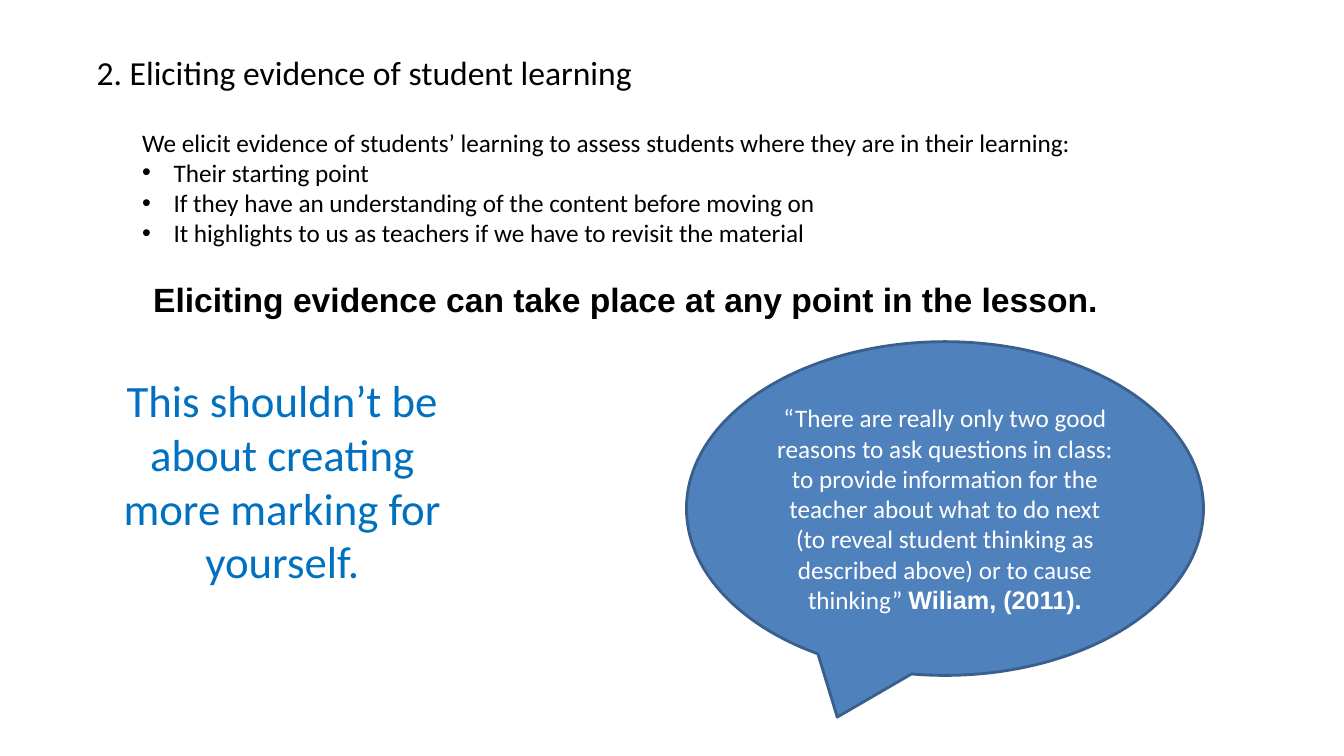
from dataclasses import dataclass

import pptx
import pptx.dml.color
import pptx.enum.shapes
import pptx.enum.text
import pptx.oxml.xmlchemy
import pptx.util
from lxml import etree
from pptx.util import Cm, Pt

TITLE = "2. Eliciting evidence of student learning"
INTRO = "We elicit evidence of students’ learning to assess students where they are in their learning:"
REASONS = [
    "Their starting point",
    "If they have an understanding of the content before moving on",
    "It highlights to us as teachers if we have to revisit the material",
]
KEY_POINT = "Eliciting evidence can take place at any point in the lesson."
REMINDER = "This shouldn’t be about creating more marking for yourself."
QUOTE = (
    "“There are really only two good reasons to ask questions in class: "
    "to provide information for the teacher about what to do next "
    "(to reveal student thinking as described above) or to cause thinking” "
)
QUOTE_SOURCE = "Wiliam, (2011)."

# left, top, width, height
PLACES = {
    "title": (Cm(2.18), Cm(1.19), Cm(23.8), Cm(1.27)),
    "body": (Cm(3.33), Cm(3.07), Cm(24.87), Cm(5.13)),
    "reminder": (Cm(2.44), Cm(9.27), Cm(9.35), Cm(5.74)),
    "quote": (Cm(17.3), Cm(8.61), Cm(13.03), Cm(8.41)),
}
BULLET_INDENT = Cm(0.79)


@dataclass(frozen=True)
class Theme:
    text_font: str = "Calibri"
    strong_font: str = "Arial"
    black: str = "000000"
    white: str = "FFFFFF"
    reminder_blue: str = "0070C0"
    bubble_fill: str = "4F81BD"
    bubble_line: str = "3A5F8C"
    body_size: int = 18
    heading_size: int = 24
    reminder_size: int = 32


THEME = Theme()
ALIGN = pptx.enum.text.PP_ALIGN
ANCHOR = pptx.enum.text.MSO_ANCHOR


def rgb(value):
    return pptx.dml.color.RGBColor.from_string(value)


def place(shape, name):
    shape.left, shape.top, shape.width, shape.height = PLACES[name]


def prepare_frame(shape, anchor):
    frame = shape.text_frame
    frame.word_wrap = True
    frame.auto_size = pptx.enum.text.MSO_AUTO_SIZE.NONE
    frame.vertical_anchor = anchor
    return frame


def add_para(frame, align, space_before=0):
    """Use the frame's first paragraph while it is empty, else append one."""
    first = frame.paragraphs[0]
    para = frame.add_paragraph() if first.runs else first
    para.alignment = align
    para.space_before = Pt(space_before)
    return para


def add_span(para, text, size, color=THEME.black, strong=False):
    span = para.add_run()
    span.text = text
    span.font.size = Pt(size)
    span.font.name = THEME.strong_font if strong else THEME.text_font
    span.font.bold = strong
    span.font.color.rgb = rgb(color)


def set_bullet(para, char=None):
    """Give the paragraph a hanging bullet, or none without a character."""
    props = para._p.get_or_add_pPr()
    indent = BULLET_INDENT if char else 0
    props.set("marL", str(indent))
    props.set("indent", str(-indent))
    tag = "a:buChar" if char else "a:buNone"
    bullet = etree.SubElement(props, pptx.oxml.ns.qn(tag))
    if char:
        bullet.set("char", char)


def fill_title(title):
    place(title, "title")
    para = add_para(prepare_frame(title, ANCHOR.MIDDLE), ALIGN.LEFT)
    add_span(para, TITLE, THEME.heading_size)


def fill_body(body):
    place(body, "body")
    body.fill.solid()
    body.fill.fore_color.rgb = rgb(THEME.white)
    frame = prepare_frame(body, ANCHOR.TOP)
    for text, char in [(INTRO, None)] + [(reason, "•") for reason in REASONS]:
        para = add_para(frame, ALIGN.JUSTIFY)
        set_bullet(para, char)
        add_span(para, text, THEME.body_size)
    para = add_para(frame, ALIGN.CENTER, space_before=22)
    set_bullet(para)
    add_span(para, KEY_POINT, THEME.heading_size, strong=True)


def add_reminder(page):
    box = page.shapes.add_textbox(*PLACES["reminder"])
    para = add_para(prepare_frame(box, ANCHOR.TOP), ALIGN.CENTER)
    add_span(para, REMINDER, THEME.reminder_size, THEME.reminder_blue)


def add_quote(page):
    kind = pptx.enum.shapes.MSO_SHAPE.OVAL_CALLOUT
    bubble = page.shapes.add_shape(kind, *PLACES["quote"])
    bubble.shadow.inherit = False
    bubble.fill.solid()
    bubble.fill.fore_color.rgb = rgb(THEME.bubble_fill)
    bubble.line.color.rgb = rgb(THEME.bubble_line)
    bubble.line.width = Pt(2)
    para = add_para(prepare_frame(bubble, ANCHOR.MIDDLE), ALIGN.CENTER)
    add_span(para, QUOTE, THEME.body_size, THEME.white)
    add_span(para, QUOTE_SOURCE, THEME.body_size, THEME.white, strong=True)


def main():
    deck = pptx.Presentation()
    deck.slide_width, deck.slide_height = Cm(33.87), Cm(19.05)
    page = deck.slides.add_slide(deck.slide_layouts[1])
    fill_title(page.shapes.title)
    fill_body(page.placeholders[1])
    add_reminder(page)
    add_quote(page)
    deck.save("out.pptx")


if __name__ == "__main__":
    main()
